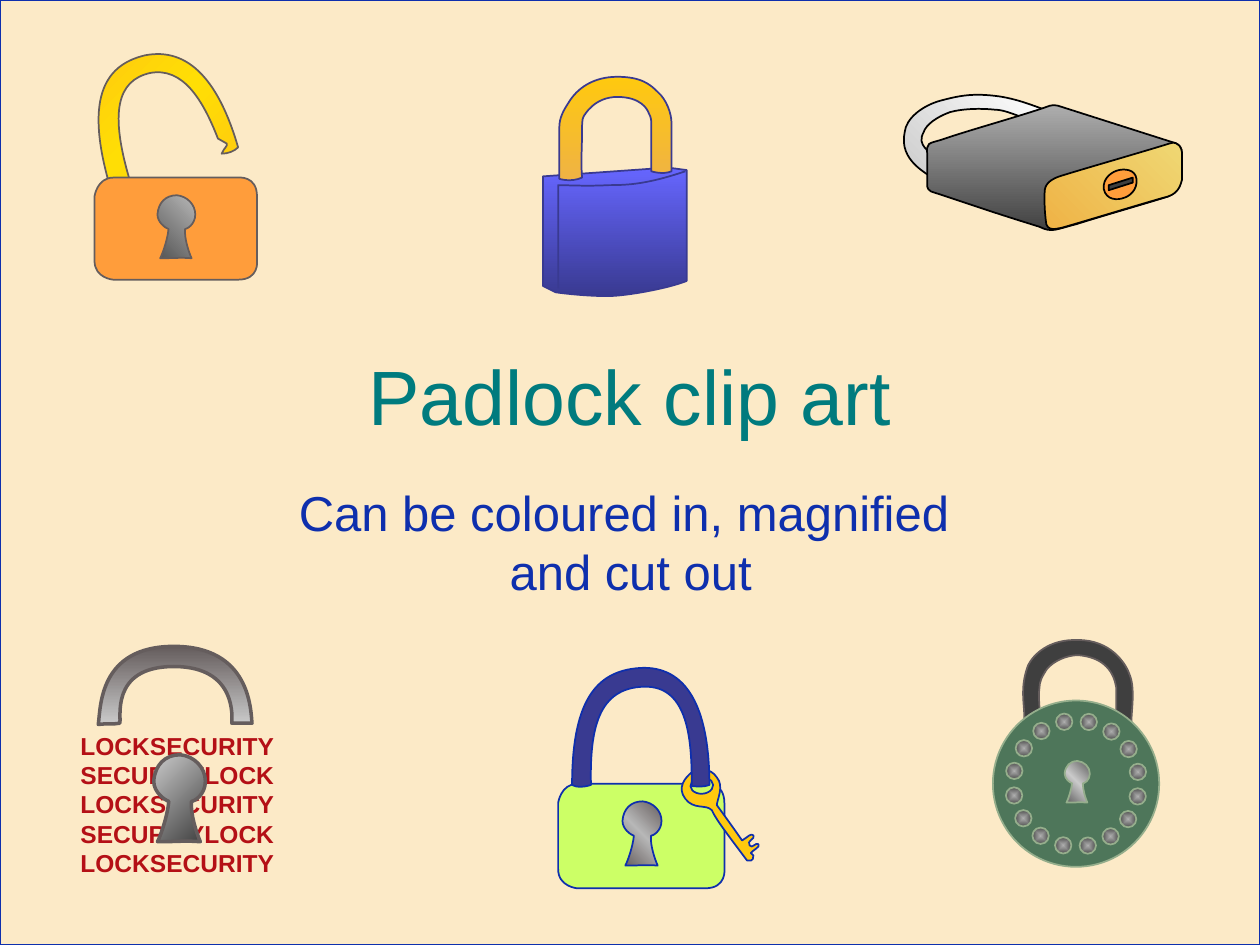
import math
from lxml import etree
from pptx import Presentation, util as u
from pptx.dml.color import RGBColor
from pptx.enum import shapes, text
from pptx.oxml.ns import qn

# Gradients are (angle, colour, colour, ...); the angle "centre" spreads from the middle.
THEME = {
    "black": "000000", "navy": "0E2FAD", "teal": "007B7E", "red": "B41016",
    "paper": "F5A300", "taupe": "655D5D", "sage": "95AE8C", "green": "4E765A",
    "lime": "CCFF66", "orange": "FF9D3B", "gold": "FFC90F", "indigo": "393A91",
    "charcoal": "3F3F3F",
    "silver": (315, "CACACA", "FFFFFF"),
    "steel": (90, "AEAEAE", "3F3F3F"),
    "brass": (315, "EFB245", "EFD874"),
    "violet": (90, "6666FF", "393A91"),
    "amber": (90, "FFC90F", "EFB245"),
    "iron": (90, "655D5D", "CACACA"),
    "sheen": (45, "FFC90F", "FFDE05", "FFC90F"),
    "stud": ("centre", "AEAEAE", "515151"),
    "hole small": (315, "5D5D5D", "CACACA", "5D5D5D"),
    "hole large": (45, "CACACA", "3F3F3F"),
    "hole plain": (315, "555555", "B7B7B7"),
    "hole shiny": (315, "655D5D", "B7B7B7", "655D5D"),
    "font": "Arial", "title": 44, "subtitle": 28, "label": 14,
}
PAPER_OPACITY = 22

# Outlines: M start, L line to, C cubic curve to; coordinates in inches.
KEYHOLE = ("M 1.43 5.99 C 1.31 5.99 1.23 6.07 1.22 6.2 1.22 6.29 1.31 6.35 1.34 6.36 "
           "1.33 6.47 1.28 6.62 1.25 6.68 1.41 6.68 1.47 6.67 1.59 6.68 "
           "1.56 6.61 1.51 6.46 1.52 6.36 1.54 6.36 1.63 6.31 1.63 6.2 1.63 6.09 1.54 6 1.43 5.99")
CASE = ("M 2.04 2.07 C 2.04 2.07 2.06 2.22 1.89 2.22 L 0.9 2.22 C 0.9 2.22 0.75 2.21 0.75 2.07 "
        "L 0.75 1.56 C 0.75 1.56 0.77 1.41 0.9 1.41 L 1.89 1.41 C 1.89 1.41 2.04 1.39 2.04 1.56 "
        "L 2.04 2.07")
LYING_SHACKLE = ("M 7.39 1.25 C 7.39 1.19 7.27 1.16 7.33 1.05 7.35 0.99 7.43 0.93 7.54 0.89 "
                 "7.65 0.86 7.8 0.86 7.89 0.87 7.99 0.87 8.08 0.93 8.16 0.94 L 8.32 0.88 "
                 "C 8.25 0.86 8.08 0.78 7.89 0.76 7.71 0.74 7.61 0.76 7.46 0.8 "
                 "7.32 0.84 7.19 0.94 7.18 1.05 7.13 1.28 7.37 1.38 7.41 1.42 "
                 "7.44 1.45 7.39 1.31 7.39 1.25")
LYING_CASE = ("M 7.39 1.52 C 7.35 1.5 7.36 1.46 7.36 1.46 7.36 1.46 7.36 1.34 7.36 1.23 "
              "7.35 1.13 7.37 1.14 7.47 1.11 7.7 1.03 8.14 0.91 8.33 0.84 "
              "8.36 0.83 8.4 0.84 8.4 0.84 L 9.31 1.13 C 9.31 1.13 9.38 1.14 9.38 1.21 "
              "9.38 1.21 9.37 1.32 9.37 1.43 9.37 1.48 9.34 1.53 9.27 1.56 "
              "9.08 1.62 8.76 1.71 8.54 1.78 8.38 1.82 8.35 1.85 8.25 1.8 "
              "7.8 1.66 7.82 1.66 7.39 1.52")
LYING_FACE = ("M 9.38 1.43 C 9.37 1.46 9.36 1.53 9.27 1.56 9.12 1.6 8.6 1.76 8.42 1.81 "
              "8.4 1.81 8.3 1.85 8.3 1.75 8.29 1.66 8.29 1.65 8.29 1.54 "
              "8.29 1.5 8.29 1.44 8.41 1.4 8.6 1.34 9.09 1.2 9.28 1.14 "
              "9.36 1.11 9.38 1.19 9.38 1.21 9.38 1.27 9.38 1.35 9.38 1.43")
BARREL = ("M 8.92 1.57 C 8.87 1.59 8.78 1.59 8.76 1.5 8.75 1.41 8.83 1.36 8.88 1.35 "
          "8.92 1.34 9.01 1.34 9.02 1.42 9.03 1.51 8.96 1.56 8.92 1.57")
SLOT = "M 8.99 1.45 L 8.8 1.51 8.8 1.47 8.99 1.41 8.99 1.45"
ROUND_SHACKLE = ("M 8.86 5.65 C 8.91 5.67 8.93 5.7 8.98 5.74 8.98 5.67 8.99 5.6 8.99 5.53 "
                 "8.99 5.47 8.99 5.41 8.96 5.34 8.93 5.26 8.81 5.08 8.56 5.08 "
                 "8.32 5.07 8.2 5.2 8.16 5.28 8.13 5.36 8.12 5.43 8.12 5.5 "
                 "8.12 5.58 8.13 5.62 8.13 5.71 8.18 5.67 8.19 5.66 8.25 5.63 "
                 "8.25 5.55 8.24 5.55 8.25 5.46 8.25 5.41 8.27 5.37 8.31 5.31 "
                 "8.36 5.25 8.46 5.2 8.56 5.2 8.66 5.21 8.73 5.24 8.78 5.29 "
                 "8.83 5.34 8.85 5.4 8.86 5.46 8.86 5.56 8.86 5.59 8.86 5.65")
BLUE_CASE = ("M 4.31 2.27 L 4.41 2.32 C 4.48 2.33 4.66 2.35 4.82 2.35 4.97 2.35 5.3 2.29 5.45 2.23 "
             "L 5.45 1.35 5.3 1.33 4.31 1.4 4.31 2.27")
BLUE_EDGE = ("M 4.43 2.29 L 4.43 1.47 C 4.5 1.47 4.66 1.48 4.83 1.47 "
             "5 1.47 5.14 1.46 5.44 1.36")
BLUE_SHACKLE = ("M 5.17 1.36 C 5.17 1.36 5.26 1.39 5.33 1.36 5.33 1.26 5.33 1.11 5.33 0.98 "
                "5.33 0.9 5.29 0.79 5.22 0.73 5.16 0.67 5.09 0.61 4.9 0.61 "
                "4.71 0.61 4.58 0.7 4.51 0.82 4.43 0.94 4.44 0.99 4.44 1.06 L 4.44 1.42 "
                "C 4.44 1.42 4.53 1.45 4.62 1.41 4.61 1.29 4.62 1.15 4.62 1.07 "
                "4.62 0.99 4.62 0.95 4.63 0.93 4.64 0.91 4.72 0.77 4.9 0.77 "
                "5.09 0.77 5.14 0.87 5.15 0.9 5.17 0.93 5.17 0.97 5.17 0.98 L 5.17 1.36")
WORD_SHACKLE = ("M 2 5.74 C 1.99 5.64 1.99 5.13 1.38 5.13 0.78 5.13 0.8 5.62 0.78 5.75 "
                "0.85 5.74 0.9 5.75 0.95 5.74 0.97 5.72 0.86 5.29 1.38 5.29 "
                "1.89 5.29 1.84 5.71 1.84 5.74 1.88 5.74 1.96 5.74 2 5.74")
OPEN_SHACKLE = ("M 1.89 1.17 C 1.74 0.65 1.5 0.37 1.15 0.44 0.81 0.52 0.68 0.81 0.87 1.47 "
                "0.92 1.47 0.97 1.46 1.03 1.43 0.87 0.89 0.93 0.64 1.19 0.58 "
                "1.45 0.53 1.61 0.79 1.73 1.1 1.77 1.12 1.77 1.12 1.8 1.14 "
                "1.81 1.16 1.78 1.17 1.76 1.22 1.81 1.22 1.86 1.2 1.89 1.17")
KEY = ("M 5.95 6.71 C 5.92 6.67 6 6.66 5.98 6.63 5.96 6.61 5.94 6.64 5.89 6.67 "
       "5.8 6.54 5.69 6.39 5.69 6.39 5.69 6.35 5.75 6.24 5.69 6.17 "
       "5.64 6.09 5.54 6.1 5.49 6.13 5.44 6.17 5.37 6.25 5.44 6.34 "
       "5.51 6.43 5.6 6.38 5.65 6.43 5.68 6.5 5.78 6.63 5.93 6.83 "
       "5.95 6.83 5.98 6.84 5.98 6.79 5.97 6.78 5.96 6.77 5.96 6.77 "
       "5.97 6.75 6.04 6.72 6.02 6.7 6 6.68 5.97 6.74 5.95 6.71")
KEYED_SHACKLE = ("M 5.63 6.23 C 5.63 5.67 5.48 5.3 5.11 5.3 4.75 5.31 4.54 5.53 4.54 6.23 "
                 "4.58 6.25 4.62 6.25 4.69 6.23 4.68 5.78 4.75 5.46 5.11 5.45 "
                 "5.47 5.44 5.49 5.89 5.49 6.24 5.53 6.24 5.58 6.25 5.63 6.23")

STUD_COUNT, STUD_SIZE, STUD_RING, STUD_START = 16, 0.13, 0.5, -10.8
DIAL_CENTRE = (8.54, 6.22)


def stud_box(number):
    angle = math.radians(STUD_START + number * 360 / STUD_COUNT)
    x, y = DIAL_CENTRE
    return (x + STUD_RING * math.cos(angle) - STUD_SIZE / 2,
            y + STUD_RING * math.sin(angle) - STUD_SIZE / 2, STUD_SIZE, STUD_SIZE)


# Each part: outline (None for an ellipse), fill, line, then optional box, weight, rotation.
LYING = [(LYING_SHACKLE, "silver", "black"), (LYING_CASE, "steel", "black"),
         (LYING_FACE, "brass", "black"), (BARREL, "orange", "black"), (SLOT, "charcoal", "black")]
ROUND = [(ROUND_SHACKLE, "charcoal", "taupe"),
         (None, "green", "sage", (7.88, 5.56, 1.32, 1.32)),
         *[(None, "stud", "sage", stud_box(n)) for n in range(STUD_COUNT)],
         (KEYHOLE, "hole small", "sage", (8.45, 6.04, 0.2, 0.33))]
BLUE = [(BLUE_CASE, "violet", "indigo"), (BLUE_EDGE, None, "indigo"),
        (BLUE_SHACKLE, "amber", "indigo")]
WORDS = [(WORD_SHACKLE, "iron", "taupe", None, 2), (KEYHOLE, "hole large", "taupe", None, 2)]
OPEN = [(OPEN_SHACKLE, "sheen", "taupe"), (CASE, "orange", "taupe"),
        (KEYHOLE, "hole plain", "taupe", (1.25, 1.55, 0.3, 0.5))]
KEYED = [(CASE, "lime", "navy", (4.43, 6.2, 1.34, 0.85)),
         (KEYHOLE, "hole shiny", "navy", (4.94, 6.36, 0.31, 0.51)),
         (KEY, "gold", "navy"), (None, "lime", "navy", (5.48, 6.17, 0.18, 0.13), 1, 357),
         (KEYED_SHACKLE, "indigo", "navy")]

TITLE = ["Padlock clip art"]
SUBTITLE = ["Can be coloured in, magnified \vand cut out"]
LABEL = ["LOCKSECURITY", "SECURITYLOCK"] * 2 + ["LOCKSECURITY"]


def trace(outline, box=None):
    """Return each point's command and its place in EMU, stretched to the box if there is one."""
    commands, numbers = [], []
    for token in outline.split():
        if token.isalpha():
            command = token
        else:
            commands.append(command)
            numbers.append(float(token))
    points = list(zip(numbers[::2], numbers[1::2]))
    if box:
        lows, highs = [min(v) for v in zip(*points)], [max(v) for v in zip(*points)]
        points = [tuple(box[i] + (p[i] - lows[i]) * box[i + 2] / (highs[i] - lows[i])
                        for i in (0, 1)) for p in points]
    return commands[::2], [(u.Inches(x), u.Inches(y)) for x, y in points]


def bend(freeform, commands):
    """Turn each three line segments that stand for a curve into one cubic curve."""
    lines = list(freeform._element.spPr.iter(qn("a:lnTo")))
    curved = [line for line, command in zip(lines, commands[1:]) if command == "C"]
    for trio in zip(curved[::3], curved[1::3], curved[2::3]):
        curve = etree.Element(qn("a:cubicBezTo"))
        trio[0].addprevious(curve)
        for line in trio:
            curve.append(line[0])
            line.getparent().remove(line)


def paint(shape, fill, line, weight=1):
    shape.shadow.inherit = False
    shape.line.color.rgb = RGBColor.from_string(THEME[line])
    shape.line.width = u.Pt(weight)
    if fill is None:
        shape.fill.background()
    elif isinstance(THEME[fill], str):
        shape.fill.solid()
        shape.fill.fore_color.rgb = RGBColor.from_string(THEME[fill])
    else:
        angle, *colours = THEME[fill]
        shape.fill.gradient()
        gradient = shape._element.spPr.find(qn("a:gradFill"))
        for child in list(gradient):
            gradient.remove(child)
        stops = etree.SubElement(gradient, qn("a:gsLst"))
        for i, colour in enumerate(colours):
            stop = etree.SubElement(stops, qn("a:gs"), pos=str(i * 100000 // (len(colours) - 1)))
            etree.SubElement(stop, qn("a:srgbClr"), val=colour)
        if angle == "centre":
            spread = etree.SubElement(gradient, qn("a:path"), path="shape")
            etree.SubElement(spread, qn("a:fillToRect"), **dict.fromkeys("ltrb", "50000"))
        else:
            etree.SubElement(gradient, qn("a:lin"), ang=str(angle * 60000), scaled="0")


def add_part(target, outline, fill, line, box=None, weight=1, rotation=0):
    if outline:
        commands, (start, *rest) = trace(outline, box)
        builder = target.build_freeform(*start)
        builder.add_line_segments(rest, close=fill is not None)
        part = builder.convert_to_shape()
        bend(part, commands)
    else:
        part = target.add_shape(shapes.MSO_SHAPE.OVAL, *map(u.Inches, box))
    part.rotation = rotation
    paint(part, fill, line, weight)


def add_text(target, lines, box, style, colour, bold=False, wrap=True,
             align=text.PP_ALIGN.CENTER, anchor=text.MSO_ANCHOR.TOP):
    frame = target.add_textbox(*map(u.Inches, box)).text_frame
    frame.word_wrap, frame.vertical_anchor = wrap, anchor
    frame.text = "\n".join(lines)
    for paragraph in frame.paragraphs:
        paragraph.alignment = align
        for run in paragraph.runs:
            for name, value in {"name": THEME["font"], "size": u.Pt(THEME[style]),
                                "bold": bold}.items():
                setattr(run.font, name, value)
            run.font.color.rgb = RGBColor.from_string(THEME[colour])


def main():
    deck = Presentation()
    deck.slide_width, deck.slide_height = u.Inches(10), u.Inches(7.5)
    slide = deck.slides.add_slide(deck.slide_layouts[6])
    paper = slide.shapes.add_shape(shapes.MSO_SHAPE.RECTANGLE, 0, 0,
                                   deck.slide_width, deck.slide_height)
    paint(paper, "paper", "navy", 0.75)
    tint = paper._element.spPr.find(qn("a:solidFill"))[0]
    etree.SubElement(tint, qn("a:alpha"), val=str(PAPER_OPACITY * 1000))
    add_text(slide.shapes, TITLE, (0.75, 2.33, 8.5, 1.61), "title", "teal",
             anchor=text.MSO_ANCHOR.MIDDLE)
    add_text(slide.shapes, SUBTITLE, (0.9, 3.78, 8.21, 1.92), "subtitle", "navy")
    for padlock in (LYING, ROUND, BLUE, WORDS, OPEN, KEYED):
        group = slide.shapes.add_group_shape().shapes
        if padlock is WORDS:
            add_text(group, LABEL, (0.54, 5.75, 1.74, 1.26), "label", "red", bold=True,
                     wrap=False, align=text.PP_ALIGN.LEFT)
        for part in padlock:
            add_part(group, *part)
    deck.save("out.pptx")


if __name__ == "__main__":
    main()
